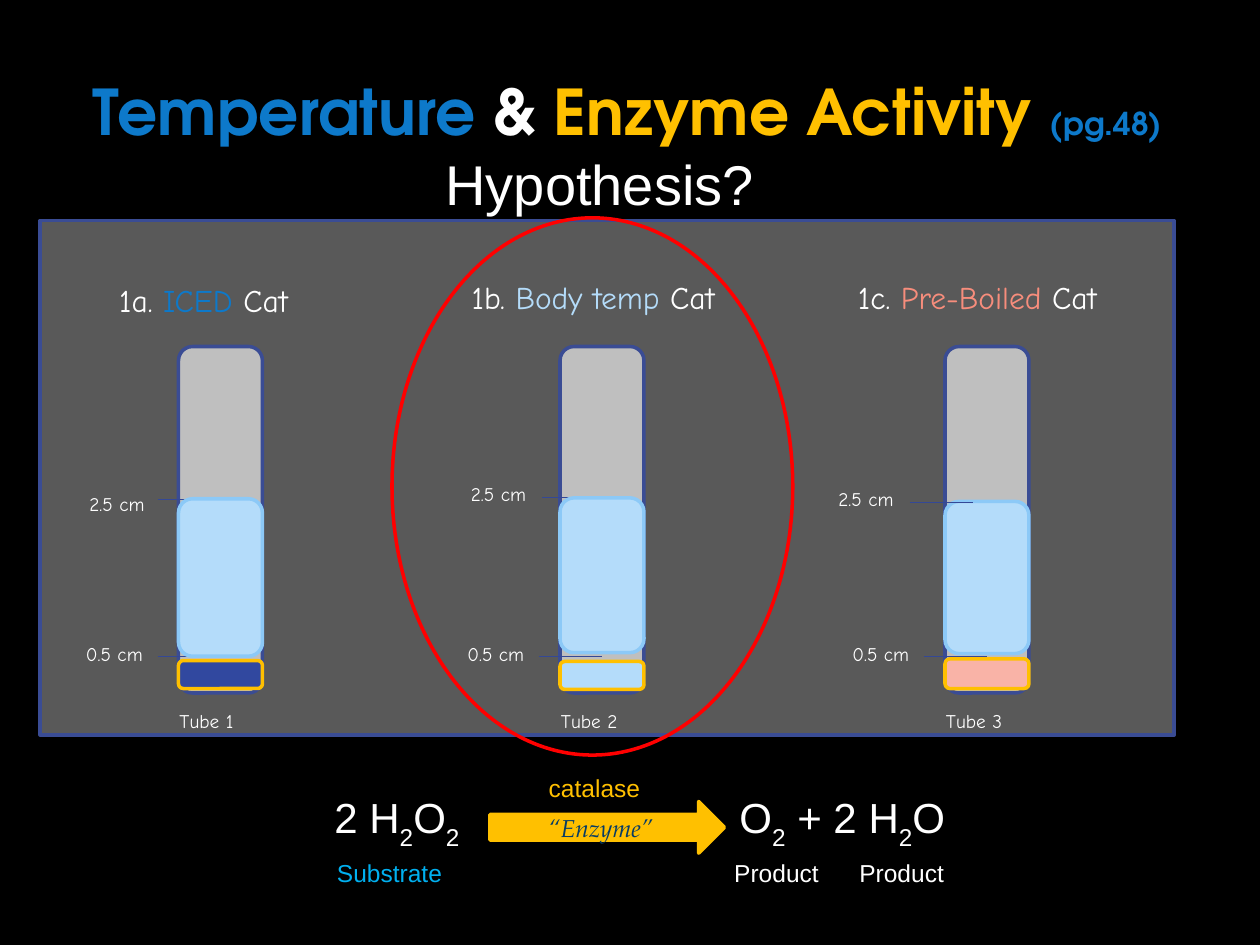
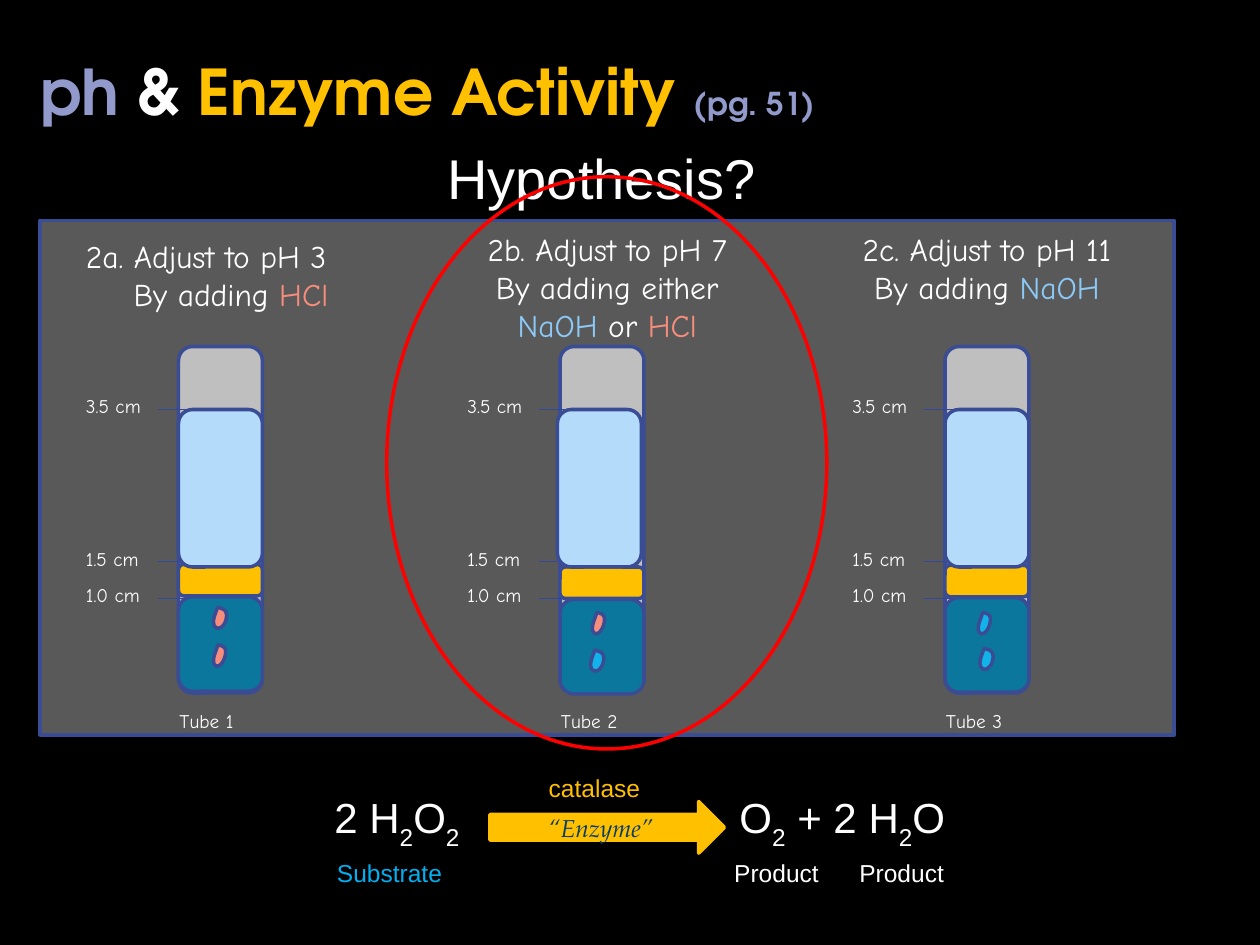
from lxml.etree import SubElement
from pptx import Presentation
from pptx.dml.color import RGBColor
from pptx.enum.shapes import MSO_CONNECTOR, MSO_SHAPE
from pptx.enum.text import MSO_ANCHOR, PP_ALIGN
from pptx.oxml.ns import qn
from pptx.util import Pt

WHITE, GOLD, BLACK, RED = "FFFFFF", "FFC000", "000000", "FF0000"
PANEL, GLASS, OUTLINE, TICK = "595959", "BFBFBF", "3A4C94", "344896"
WATER, WATER_EDGE, BASE_DROP = "B4DCFA", "8CC9F7", "12B2EB"
ACID, PALE_ACID, NAVY, TEAL = "F78D7C", "F9B3A7", "31489F", "0C779D"
BLUE, LILAC, SKY, INK = "0D79CA", "919ACA", "00B0F0", "073C65"

TITLE = dict(name="TeX Gyre Adventor", size=Pt(36), bold=True)
QUESTION = dict(name="Arial", size=Pt(32))
FORMULA = dict(name="Arial", size=Pt(24))
LABEL = dict(name="Arial", size=Pt(14))
HEADING = dict(name="Comic Neue", size=Pt(18))
MARK = dict(name="Comic Neue", size=Pt(11))
ENZYME = dict(name="TeX Gyre Pagella", size=Pt(14), italic=True)

TUBE_LEFTS = (102, 320, 540)
TUBE_TOP, TUBE_WIDTH, TUBE_HEIGHT = 198, 48, 198
LEFT, CENTER = PP_ALIGN.LEFT, PP_ALIGN.CENTER


def rgb(value):
    return RGBColor.from_string(value)


def write(p, runs, style, align=LEFT):
    """Add runs given as (text, colour) or (text, colour, style changes)."""
    p.alignment = align
    for text, color, *changes in runs:
        r = p.add_run()
        r.text = text
        for name, value in {**style, **(changes[0] if changes else {})}.items():
            setattr(r.font, name, value)
        r.font.color.rgb = rgb(color)


def add_text(s, box, paragraphs, style, wrap=True, anchor=MSO_ANCHOR.TOP):
    """Add a text box; paragraphs are (alignment, runs) pairs."""
    tf = s.shapes.add_textbox(*map(Pt, box)).text_frame
    tf.word_wrap = wrap
    tf.vertical_anchor = anchor
    for i, (align, runs) in enumerate(paragraphs):
        p = tf.add_paragraph() if i else tf.paragraphs[0]
        write(p, runs, style, align)


def add_label(s, left, top, width, height, text, style, color=WHITE):
    add_text(s, (left, top, width, height), [(LEFT, [(text, color)])], style, wrap=False)


def add_figure(s, kind, box, fill, line):
    sp = s.shapes.add_shape(kind, *map(Pt, box))
    sp.shadow.inherit = False
    if fill:
        sp.fill.solid()
        sp.fill.fore_color.rgb = rgb(fill)
    else:
        sp.fill.background()
    sp.line.color.rgb = rgb(line)
    sp.line.width = Pt(2)
    return sp


def add_mark(s, tube, text, y, label_y, line_dx=-12, label_dx=-60):
    """Add a level line beside a tube, with its height label."""
    x = tube + line_dx
    c = s.shapes.add_connector(MSO_CONNECTOR.STRAIGHT, Pt(x), Pt(y), Pt(x + 36), Pt(y))
    c.line.color.rgb = rgb(TICK)
    c.line.width = Pt(0.75)
    SubElement(c._element.spPr, qn("a:effectLst"))
    add_label(s, tube + label_dx, label_y, 48, 21, text, MARK)


def add_layer(s, tube, top, height, fill, line=OUTLINE, dx=0):
    box = (tube + dx, top, TUBE_WIDTH, height)
    add_figure(s, MSO_SHAPE.ROUNDED_RECTANGLE, box, fill, line)


def add_tube(s, tube, number):
    add_layer(s, tube, TUBE_TOP, TUBE_HEIGHT, GLASS)
    add_label(s, tube - 6.5, 401.5, 50, 21, f"Tube {number}", MARK)


def add_drop(s, left, top, width, height, fill):
    add_figure(s, MSO_SHAPE.TEAR, (left, top, width, height), fill, OUTLINE).rotation = 289.4


def add_title(s, box, topic, page, color):
    runs = [(topic, color), ("& ", WHITE), ("Enzyme Activity ", GOLD),
            (page, color, dict(size=Pt(18)))]
    add_text(s, box, [(LEFT, runs)], TITLE, anchor=MSO_ANCHOR.MIDDLE)


def add_formula(s, left, width, text):
    """Add a formula in which each digit after a letter is a subscript."""
    tf = s.shapes.add_textbox(Pt(left), Pt(451.5), Pt(width), Pt(36)).text_frame
    tf.vertical_anchor = MSO_ANCHOR.MIDDLE
    tf.word_wrap = True
    p = tf.paragraphs[0]
    for before, char in zip(" " + text, text):
        write(p, [(char, WHITE)], FORMULA)
        if char.isdigit() and before.isalpha():
            p.runs[-1]._r.get_or_add_rPr().set("baseline", "-30000")


def add_reaction(s):
    add_formula(s, 184, 100, "2 H2O2")
    add_formula(s, 415.5, 160, "O2 + 2 H2O")
    for left, top, text, color in ((306.5, 438, "catalase", GOLD),
                                   (185.5, 487, "Substrate", SKY),
                                   (412.5, 487, "Product", WHITE),
                                   (484, 487, "Product", WHITE)):
        add_label(s, left, top, 75, 24, text, LABEL, color)
    arrow = add_figure(s, MSO_SHAPE.RIGHT_ARROW, (280, 458, 134, 29.5), GOLD, GOLD)
    arrow.text_frame.vertical_anchor = MSO_ANCHOR.MIDDLE
    write(arrow.text_frame.paragraphs[0], [("“Enzyme”", INK)], ENZYME, CENTER)


def add_base(prs):
    """Add a slide with what both slides share: background, panel, tubes."""
    s = prs.slides.add_slide(prs.slide_layouts[6])
    s.background.fill.solid()
    s.background.fill.fore_color.rgb = rgb(BLACK)
    add_figure(s, MSO_SHAPE.RECTANGLE, (23, 126, 648, 294), PANEL, OUTLINE)
    for number, tube in enumerate(TUBE_LEFTS, 1):
        add_tube(s, tube, number)
    add_reaction(s)
    return s


def add_hypothesis(s, left, top, ring):
    add_label(s, left, top, 192, 46, "Hypothesis?", QUESTION)
    add_figure(s, MSO_SHAPE.OVAL, ring, None, RED)


def build_temperature(prs):
    s = add_base(prs)
    add_title(s, (46, 26, 680, 74), "Temperature ", "(pg.48)", BLUE)
    headings = (((61, 157, 180, 29), LEFT, "1a. ", "ICED ", BLUE),
                ((247.5, 155.5, 183, 29), CENTER, "1b. ", "Body temp ", WATER),
                ((466, 155.5, 185, 29), CENTER, "1c. ", "Pre-Boiled ", ACID))
    for box, align, item, state, color in headings:
        add_text(s, box, [(align, [(item, WHITE), (state, color), ("Cat", WHITE)])], HEADING)

    for tube in TUBE_LEFTS:
        add_mark(s, tube, "0.5 cm", 375, 363.5)
    iced, body, boiled = TUBE_LEFTS
    add_mark(s, iced, "2.5 cm", 285.5, 278, label_dx=-58)
    add_mark(s, body, "2.5 cm", 284.5, 272, -10, -58)
    liquids = ((285, 90, 376.5 + 1, 16, NAVY), (284.5, 88.5, 378, 16, WATER),
               (286.5, 87, 376.5, 17, PALE_ACID))
    for tube, (top, height, enzyme_top, enzyme_height, enzyme) in zip(TUBE_LEFTS, liquids):
        add_layer(s, tube, top, height, WATER, WATER_EDGE)
        add_layer(s, tube, enzyme_top, enzyme_height, enzyme, GOLD)
    add_mark(s, boiled, "2.5 cm", 287, 275, -20, -68)
    add_hypothesis(s, 247.5, 82, (224, 124.5, 229, 307))


def build_ph(prs):
    s = add_base(prs)
    add_title(s, (16, 6.5, 648, 90), "ph ", "(pg. 51)", LILAC)
    acid, base = ("HCl", ACID), ("NaOH", WATER_EDGE)
    headings = (((42, 132, 180, 51), LEFT, "2a. Adjust to pH 3",
                 [("By adding ", WHITE), acid]),
                ((255.5, 128, 183, 73), CENTER, "2b. Adjust to pH 7",
                 [("By adding either ", WHITE), base, (" or ", WHITE), acid]),
                ((471.5, 128, 185, 51), CENTER, "2c. Adjust to pH 11",
                 [("By adding ", WHITE), base]))
    for box, align, target, method in headings:
        add_text(s, box, [(align, [(target, WHITE)]), (CENTER, method)], HEADING)

    for tube, enzyme_top, water_dx in zip(TUBE_LEFTS, (322.5, 324, 323), (0, -1.5, 0)):
        for text, y in (("1.0 cm", 342), ("1.5 cm", 321), ("3.5 cm", 234)):
            add_mark(s, tube, text, y, y - 12)
        add_layer(s, tube, enzyme_top, 18, GOLD)
        add_layer(s, tube, enzyme_top + 18.5, 54, TEAL)
        add_layer(s, tube, 234, 90, WATER, dx=water_dx)

    slim, wide = (12, 6), (11.5, 7)
    for left, top, size, color in ((120, 350, wide, ACID), (119.5, 372, slim, ACID),
                                   (336, 353.5, slim, ACID), (335.5, 374.5, wide, BASE_DROP),
                                   (556.5, 353.5, slim, BASE_DROP), (558, 373.5, wide, BASE_DROP)):
        add_drop(s, left, top, *size, color)
    add_hypothesis(s, 248.5, 78.5, (221, 101, 251.5, 327))


def main():
    prs = Presentation()
    prs.slide_width, prs.slide_height = Pt(720), Pt(540)
    build_temperature(prs)
    build_ph(prs)
    prs.save("out.pptx")


if __name__ == "__main__":
    main()
